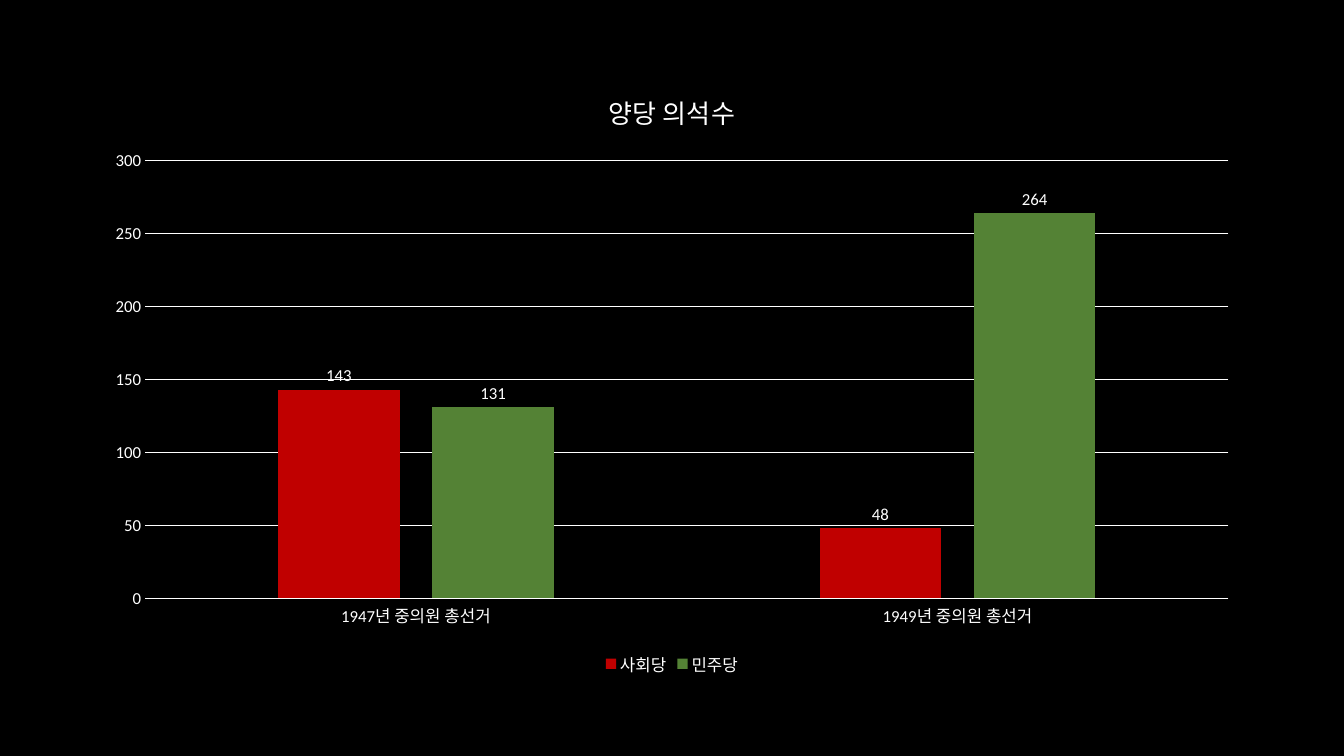
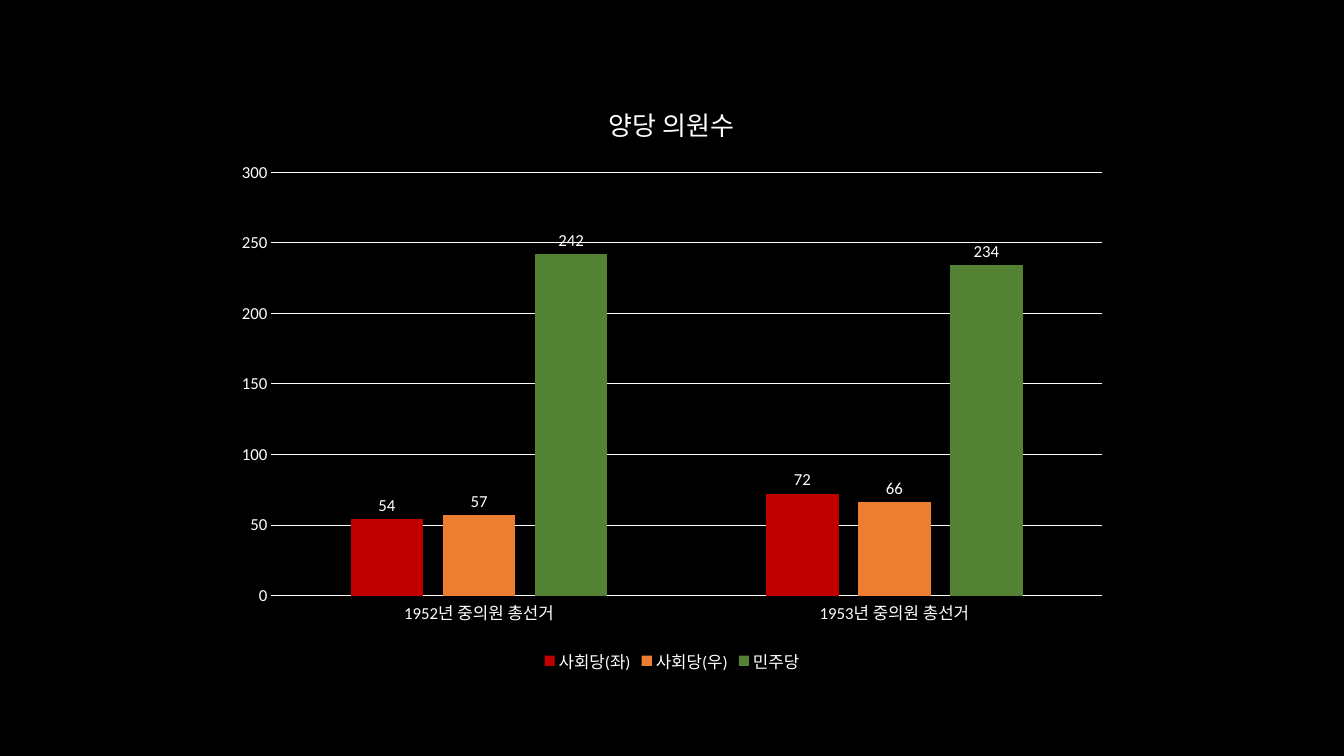
from pptx import Presentation
from pptx.chart.data import CategoryChartData
from pptx.dml.color import RGBColor
from pptx.enum.chart import XL_CHART_TYPE as ChartType
from pptx.enum.chart import XL_LABEL_POSITION as LabelPosition
from pptx.enum.chart import XL_LEGEND_POSITION as LegendPosition
from pptx.enum.chart import XL_TICK_MARK as TickMark
from pptx.util import Inches, Pt

BLACK = RGBColor(0x00, 0x00, 0x00)
WHITE = RGBColor(0xFF, 0xFF, 0xFF)
RED = RGBColor(0xC0, 0x00, 0x00)
ORANGE = RGBColor(0xED, 0x7D, 0x31)
GREEN = RGBColor(0x54, 0x82, 0x35)


class SeatDeck:
    font_name = "Calibri"
    title_size = 18.6
    text_size = 12
    line_width = 0.75

    def __init__(self):
        self.presentation = Presentation()
        self.presentation.slide_width = Inches(13.33)
        self.presentation.slide_height = Inches(7.5)
        fill = self.presentation.slide_master.background.fill
        fill.solid()
        fill.fore_color.rgb = BLACK
        self.slide = None

    def add_slide(self):
        blank_layout = self.presentation.slide_layouts[6]
        self.slide = self.presentation.slides.add_slide(blank_layout)

    def style_font(self, font, size=text_size):
        font.name = self.font_name
        font.size = Pt(size)
        font.bold = False
        font.color.rgb = WHITE

    def style_line(self, line):
        line.color.rgb = WHITE
        line.width = Pt(self.line_width)

    def add_title(self, chart, text):
        chart.has_title = True
        run = chart.chart_title.text_frame.paragraphs[0].add_run()
        run.text = text
        self.style_font(run.font, self.title_size)

    def add_legend(self, chart):
        chart.has_legend = True
        chart.legend.position = LegendPosition.BOTTOM
        chart.legend.include_in_layout = False
        self.style_font(chart.legend.font)

    def style_axes(self, chart):
        for axis in (chart.category_axis, chart.value_axis):
            axis.major_tick_mark = TickMark.NONE
            axis.minor_tick_mark = TickMark.NONE
            self.style_font(axis.tick_labels.font)
        self.style_line(chart.category_axis.format.line)
        value_axis = chart.value_axis
        value_axis.minimum_scale = 0
        value_axis.maximum_scale = 300
        value_axis.major_unit = 50
        value_axis.format.line.fill.background()
        value_axis.has_major_gridlines = True
        self.style_line(value_axis.major_gridlines.format.line)

    def style_bars(self, chart, colors):
        plot = chart.plots[0]
        plot.gap_width = 219
        plot.overlap = -27
        plot.vary_by_categories = False
        for series, color in zip(plot.series, colors):
            series.invert_if_negative = False
            series.format.fill.solid()
            series.format.fill.fore_color.rgb = color
            labels = series.data_labels
            labels.show_value = True
            labels.position = LabelPosition.OUTSIDE_END
            self.style_font(labels.font)

    def add_column_chart(self, title, years, parties, top, width, height):
        data = CategoryChartData()
        data.categories = [f"{year}년 중의원 총선거" for year in years]
        for name, _, seats in parties:
            data.add_series(name, seats)
        slide_width = self.presentation.slide_width
        slide_height = self.presentation.slide_height
        chart = self.slide.shapes.add_chart(
            ChartType.COLUMN_CLUSTERED,
            round(slide_width * (100 - width) / 200),
            round(slide_height * top / 100),
            round(slide_width * width / 100),
            round(slide_height * height / 100),
            data,
        ).chart
        self.style_font(chart.font, 10)
        self.add_title(chart, title)
        self.add_legend(chart)
        self.style_axes(chart)
        self.style_bars(chart, [color for _, color, _ in parties])


def main():
    deck = SeatDeck()

    deck.add_slide()
    deck.add_column_chart(
        "양당 의석수",
        (1947, 1949),
        [("사회당", RED, (143, 48)), ("민주당", GREEN, (131, 264))],
        top=8.93, width=86.25, height=81.07,
    )

    deck.add_slide()
    deck.add_column_chart(
        "양당 의원수",
        (1952, 1953),
        [
            ("사회당(좌)", RED, (54, 72)),
            ("사회당(우)", ORANGE, (57, 66)),
            ("민주당", GREEN, (242, 234)),
        ],
        top=10.53, width=66.67, height=79.07,
    )

    deck.presentation.save("out.pptx")


if __name__ == "__main__":
    main()
